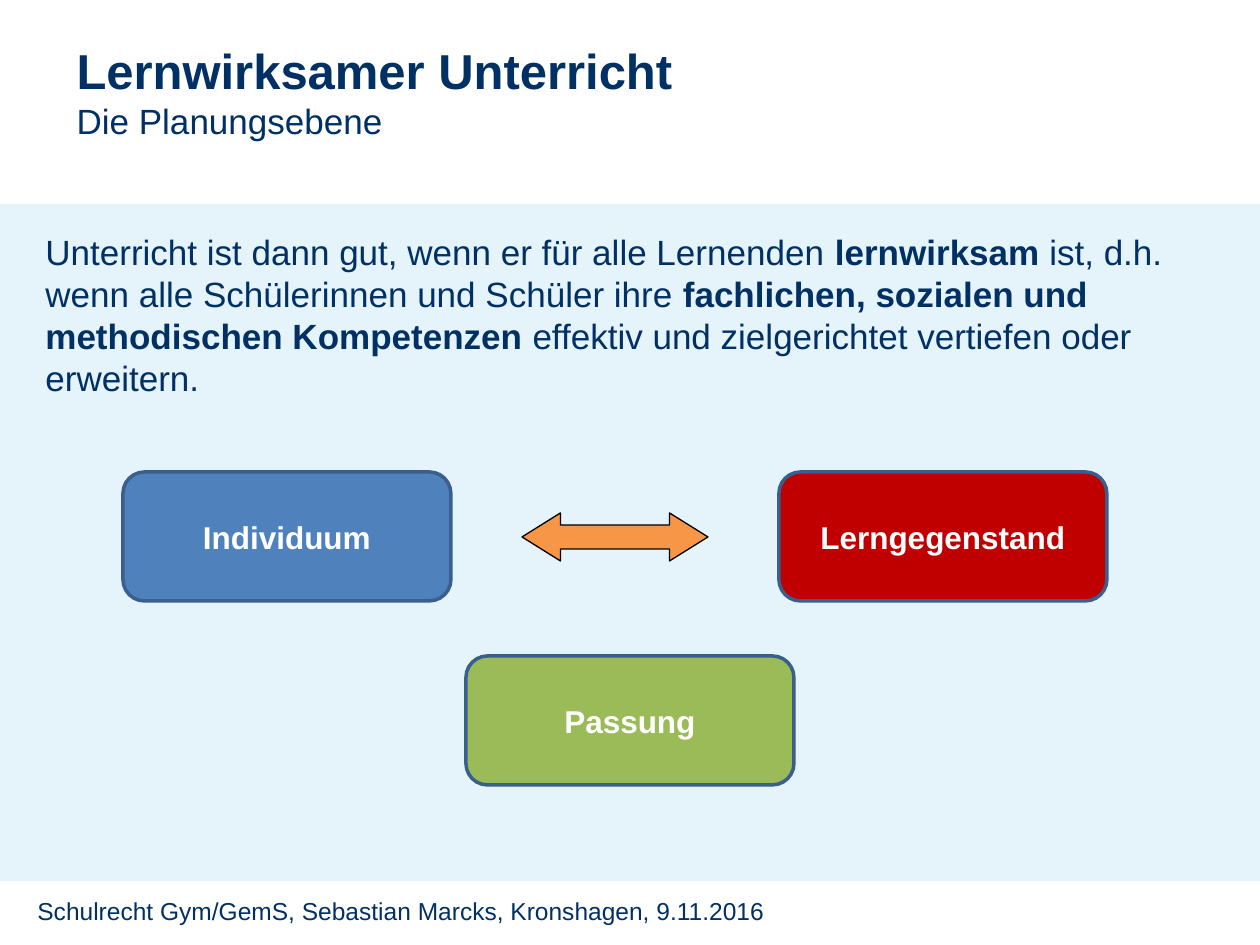
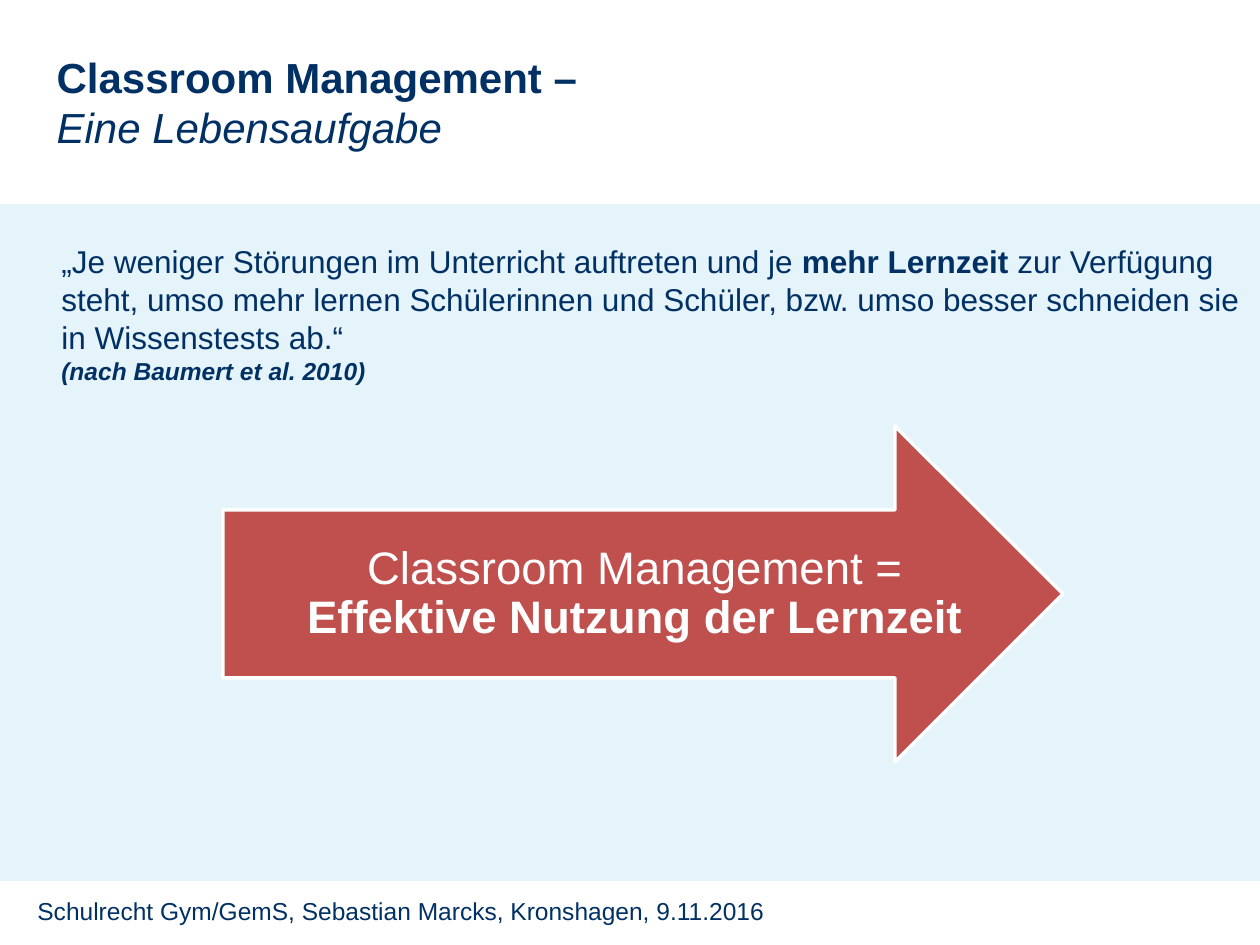
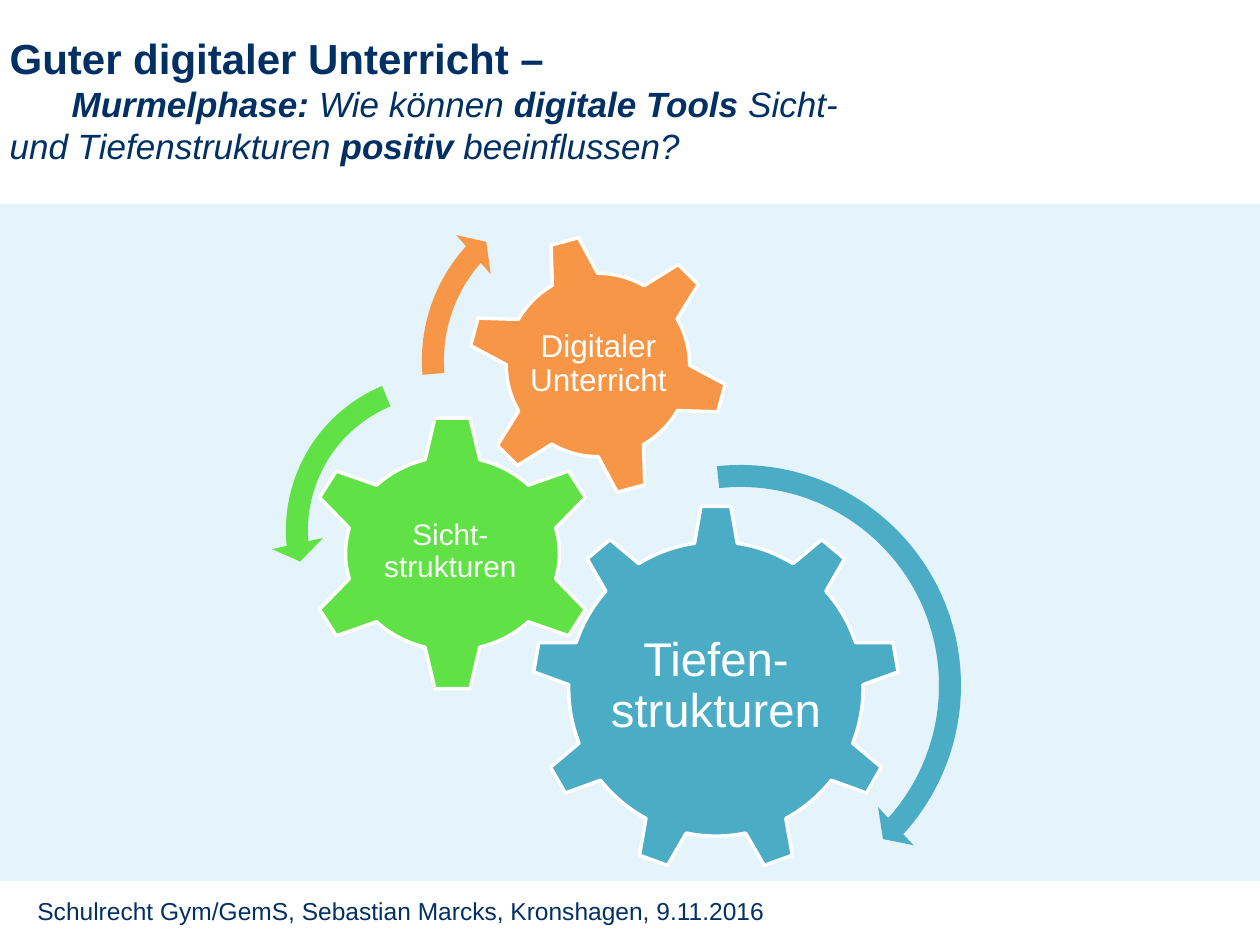
import pptx
import pptx.util
import pptx.dml.color
import pptx.enum.shapes
import pptx.enum.text
import pptx.oxml
import pptx.oxml.ns

PX = 7257  # EMU per pixel, 126 pixels to the inch
NAVY, WHITE, BLACK = "003064", "FFFFFF", "000000"
BLUE, RED, GREEN, ORANGE = "4F81BD", "C00000", "9BBB59", "F79646"
BRICK, TEAL, LIME = "C0504D", "4BACC6", "60E146"
BAND, BOX_EDGE = "008CCF", "3A5F8C"
FONT = "Arial"
FOOTER = "Schulrecht Gym/GemS, Sebastian Marcks, Kronshagen, 9.11.2016"

rgb = pptx.dml.color.RGBColor.from_string
Kind = pptx.enum.shapes.MSO_SHAPE
Align = pptx.enum.text.PP_ALIGN
Anchor = pptx.enum.text.MSO_ANCHOR


def add_filled(slide, kind, box, fill, edge=None, edge_width=2, adjustments=()):
    shape = slide.shapes.add_shape(kind, *(n * PX for n in box))
    shape.shadow.inherit = False
    shape.fill.solid()
    shape.fill.fore_color.rgb = rgb(fill)
    if edge:
        shape.line.color.rgb = rgb(edge)
        shape.line.width = pptx.util.Pt(edge_width)
    else:
        shape.line.fill.background()
    for i, value in enumerate(adjustments):
        shape.adjustments[i] = value
    return shape


def write(shape, paragraphs, color=NAVY, align=Align.LEFT, anchor=Anchor.TOP, spacing=None):
    """Fill a shape with paragraphs, each (size, [(text, style)]); style holds b and/or i."""
    frame = shape.text_frame
    frame.word_wrap = True
    frame.auto_size = pptx.enum.text.MSO_AUTO_SIZE.NONE
    frame.vertical_anchor = anchor
    for i, (size, runs) in enumerate(paragraphs):
        paragraph = frame.add_paragraph() if i else frame.paragraphs[0]
        paragraph.alignment = align
        if spacing:
            paragraph.line_spacing = spacing
        for text, style in runs:
            run = paragraph.add_run()
            run.text = text
            run.font.name = FONT
            run.font.size = pptx.util.Pt(size)
            run.font.bold = "b" in style
            run.font.italic = "i" in style
            run.font.color.rgb = rgb(color)
    return frame


prs = pptx.Presentation()
prs.slide_width, prs.slide_height = 1260 * PX, 945 * PX

# Title, band and footer of every slide
headings = [
    ((64, 34, 674, 174), [
        (28, [("Lernwirksamer Unterricht", "b")]),
        (20, [("Die Planungsebene", "")])]),
    ((44, 45, 711, 115), [
        (24, [("Classroom Management –", "b")]),
        (24, [("Eine Lebensaufgabe", "i")])]),
    ((-3, 26, 912, 190), [
        (24, [("Guter digitaler Unterricht –", "b")]),
        (20, [("Murmelphase: ", "bi"), ("Wie können ", "i"), ("digitale Tools", "bi"),
              (" Sicht- und Tiefenstrukturen ", "i"), ("positiv", "bi"),
              (" beeinflussen?", "i")])]),
]
for box, heading in headings:
    slide = prs.slides.add_slide(prs.slide_layouts[5])
    title = slide.shapes.title
    title.left, title.top, title.width, title.height = (n * PX for n in box)
    write(title, heading)
    band = add_filled(slide, Kind.RECTANGLE, (0, 204, 1260, 677), BAND)
    band_color = band.fill._xPr.find(".//" + pptx.oxml.ns.qn("a:srgbClr"))
    band_color.append(pptx.oxml.parse_xml(
        f'<a:alpha {pptx.oxml.ns.nsdecls("a")} val="10000"/>'))
    footer = slide.shapes.add_textbox(25 * PX, 890 * PX, 1081 * PX, 65 * PX)
    write(footer, [(14, [(FOOTER, "")])])

planning, management, digital = prs.slides

# Slide 1: individual and subject matter have to fit
definition = planning.shapes.add_textbox(33 * PX, 224 * PX, 1194 * PX, 301 * PX)
write(definition, [(20, [
    ("Unterricht ist dann gut, wenn er für alle Lernenden ", ""),
    ("lernwirksam", "b"),
    (" ist, d.h. wenn alle Schülerinnen und Schüler ihre ", ""),
    ("fachlichen, sozialen und methodischen Kompetenzen ", "b"),
    ("effektiv und zielgerichtet vertiefen oder erweitern.", "")])])
for label, left, top, fill in [
    ("Individuum", 123, 472, BLUE),
    ("Lerngegenstand", 779, 472, RED),
    ("Passung", 466, 656, GREEN),
]:
    factor = add_filled(planning, Kind.ROUNDED_RECTANGLE, (left, top, 328, 129), fill, BOX_EDGE)
    write(factor, [(18, [(label, "b")])], WHITE, Align.CENTER, Anchor.MIDDLE)
add_filled(planning, Kind.LEFT_RIGHT_ARROW, (522, 513, 186, 48), ORANGE, BLACK, 0.75, (0.5, 0.8))

# Slide 2: quotation and its conclusion
quotation = management.shapes.add_textbox(49 * PX, 236 * PX, 1211 * PX, 157 * PX)
write(quotation, [
    (18, [("„Je weniger Störungen im Unterricht auftreten und je", ""),
          (" mehr Lernzeit ", "b"),
          ("zur Verfügung steht, umso mehr lernen Schülerinnen und Schüler, "
           "bzw. umso besser schneiden sie in Wissenstests ab.“", "")]),
    (14, [("(nach Baumert et al. 2010)", "bi")])])
conclusion = add_filled(management, Kind.RIGHT_ARROW, (223, 426, 840, 336), BRICK, WHITE)
frame = write(conclusion, [(26, [("Classroom Management = ", ""),
                                 ("Effektive Nutzung der Lernzeit", "b")])],
              WHITE, Align.CENTER, Anchor.MIDDLE, 0.9)
frame.margin_left, frame.margin_right = 68 * PX, 0

# Slide 3: interlocking gears with their turning directions
question = digital.shapes.title.text_frame.paragraphs[1]
question._p.get_or_add_pPr().set("indent", str(62 * PX))
for kind, gear_box, turn, fill, label, size, label_box in [
    (Kind.GEAR_9, (532, 505, 368, 368), 0, TEAL, "Tiefen-strukturen", 27, (606, 592, 220, 189)),
    (Kind.GEAR_6, (304, 415, 297, 277), 0, LIME, "Sicht-strukturen", 17, (375, 484, 151, 136)),
    (Kind.GEAR_6, (467, 234, 262, 262), 345, ORANGE, "Digitaler Unterricht", 18,
     (525, 291, 147, 147)),
]:
    gear = add_filled(digital, kind, gear_box, fill, WHITE)
    gear.rotation = turn
    caption = digital.shapes.add_textbox(*(n * PX for n in label_box))
    frame = write(caption, [(size, [(label, "")])], WHITE, Align.CENTER, Anchor.MIDDLE, 0.9)
    frame.margin_left = frame.margin_right = frame.margin_top = frame.margin_bottom = 4 * PX

SHAFT, HEAD = 22, 26
for kind, left, top, size, fill, angles in [
    (Kind.CIRCULAR_ARROW, 505, 450, 471, TEAL, (2.99, 25.3, 158.32)),
    (Kind.LEFT_CIRCULAR_ARROW, 271, 359, 343, LIME, (4.3, 104.89, 148.38)),
    (Kind.CIRCULAR_ARROW, 407, 176, 369, ORANGE, (3.94, 133.14, 105.08)),
]:
    add_filled(digital, kind, (left, top, size, size), fill,
               adjustments=(SHAFT / size, *angles, HEAD / size))

prs.save("out.pptx")
